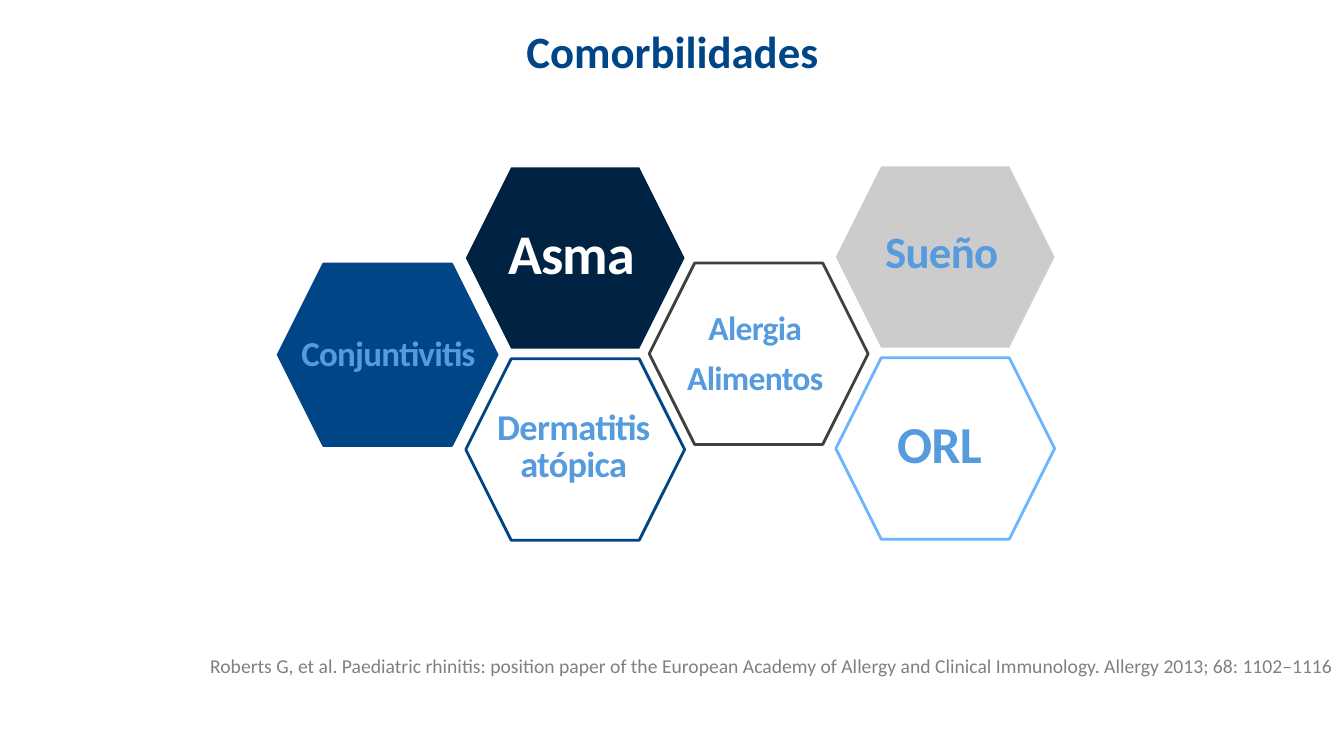
from pptx import Presentation
from pptx.dml.color import RGBColor
from pptx.enum.shapes import MSO_SHAPE
from pptx.enum.text import MSO_ANCHOR, PP_ALIGN
from pptx.util import Inches, Pt

COLORS = {
    "navy": "002243", "blue": "004586", "sky": "569BDD", "light": "69B6FF",
    "silver": "CCCCCC", "gray": "808080", "dark": "404040", "white": "FFFFFF",
}
HEXAGON_SIZE = (2.17, 1.8)
LEFT, CENTER, RIGHT = PP_ALIGN.LEFT, PP_ALIGN.CENTER, PP_ALIGN.RIGHT


def set_all(target, values):
    for name, value in values.items():
        setattr(target, name, value)


def color(name):
    return RGBColor.from_string(COLORS[name])


class ComorbiditySlide:
    font_name = "Calibri"

    def __init__(self, deck):
        self.slide = deck.slides.add_slide(deck.slide_layouts[5])

    def fill_text(self, shape, lines, size, ink, align, anchor, bold=True, spacing=None, tracking=None):
        """Fill a shape with one paragraph per line; tracking is in hundredths of a point."""
        frame = shape.text_frame
        set_all(frame, {"word_wrap": True, "vertical_anchor": anchor})
        frame.text = "\n".join(lines)
        for paragraph in frame.paragraphs:
            set_all(paragraph, {"alignment": align, "line_spacing": spacing})
            for run in paragraph.runs:
                set_all(run.font, {"name": self.font_name, "size": Pt(size), "bold": bold})
                run.font.color.rgb = color(ink)
                if tracking is not None:
                    run.font._element.set("spc", str(tracking))

    def title(self, text, box):
        title = self.slide.shapes.title
        set_all(title, dict(zip(("left", "top", "width", "height"), map(Inches, box))))
        self.fill_text(title, [text], 32, "blue", CENTER, MSO_ANCHOR.MIDDLE)

    def hexagon(self, left, top, fill, outline):
        hexagon = self.slide.shapes.add_shape(
            MSO_SHAPE.HEXAGON, *map(Inches, (left, top, *HEXAGON_SIZE)))
        hexagon.shadow.inherit = False
        hexagon.fill.solid()
        hexagon.fill.fore_color.rgb = color(fill)
        if outline:
            hexagon.line.color.rgb = color(outline)
            hexagon.line.width = Pt(2)
        else:
            hexagon.line.fill.background()

    def text(self, lines, box, size, ink, align, anchor=MSO_ANCHOR.BOTTOM, **style):
        textbox = self.slide.shapes.add_textbox(*map(Inches, box))
        self.fill_text(textbox, lines, size, ink, align, anchor, **style)


def main():
    deck = Presentation()
    set_all(deck, {"slide_width": Inches(13.33), "slide_height": Inches(7.5)})
    slide = ComorbiditySlide(deck)
    slide.title("Comorbilidades", (0.67, 0.17, 12, 0.66))

    hexagons = [
        (4.62, 1.66, "navy", None),
        (6.44, 2.61, "white", "dark"),
        (2.76, 2.62, "blue", "blue"),
        (4.62, 3.56, "white", "blue"),
        (8.29, 1.65, "silver", None),
        (8.29, 3.55, "white", "light"),
    ]
    for hexagon in hexagons:
        slide.hexagon(*hexagon)

    comorbidities = [
        (["Asma"], (4.94, 2.19, 1.52, 0.7), 40, "white", LEFT, 0.85),
        (["Dermatitis", "atópica"], (4.79, 4, 1.8, 0.86), 26, "sky", CENTER, 0.85),
        (["ORL"], (8.8, 4.17, 1.08, 0.57), 37, "sky", LEFT, 0.75),
        (["Conjuntivitis"], (2.89, 3.17, 2, 0.57), 25, "sky", LEFT, 0.65),
        (["Alergia", "Alimentos"], (6.52, 2.84, 1.94, 1.15), 24, "sky", CENTER, Pt(36)),
        (["Sueño"], (8.37, 2.08, 1.94, 0.72), 32, "sky", CENTER, Pt(36)),
    ]
    for *label, spacing in comorbidities:
        slide.text(*label, spacing=spacing, tracking=-50)

    slide.text(
        ["Roberts G, et al. Paediatric rhinitis: position paper of the European Academy of "
         "Allergy and Clinical Immunology. Allergy 2013; 68: 1102–1116"],
        (0.67, 6.44, 12.66, 0.32), 14, "gray", RIGHT, MSO_ANCHOR.TOP, bold=False)
    deck.save("out.pptx")


if __name__ == "__main__":
    main()
